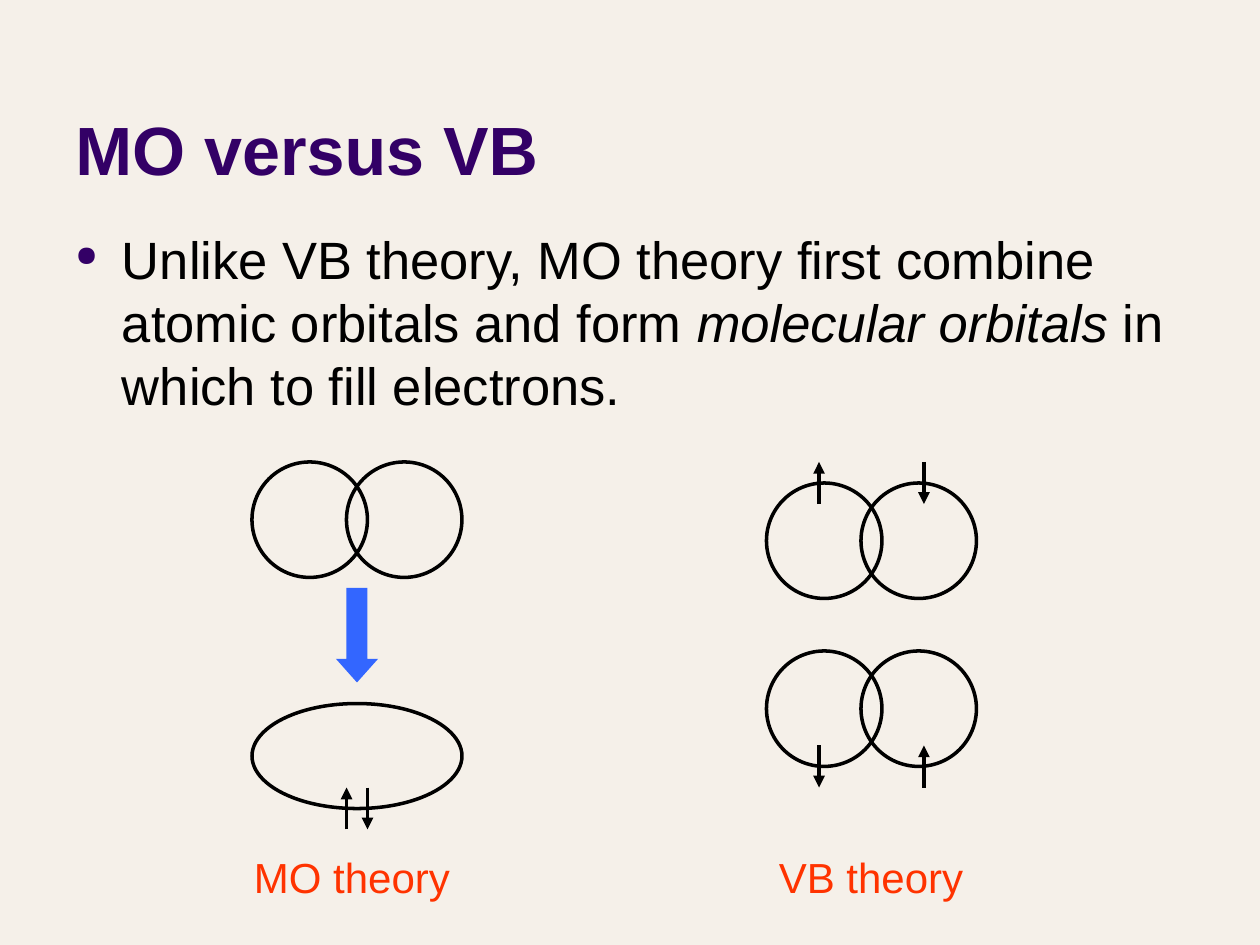
from pptx import Presentation, util as u
from pptx.dml.color import RGBColor
from pptx.enum import shapes, text
from pptx.oxml.ns import qn
from lxml import etree

CELL = u.Inches(1) / 12


def grid(*cells):
    return [u.Emu(round(cell * CELL)) for cell in cells]


def color(value):
    return RGBColor.from_string(value)


deck = Presentation()
deck.slide_width, deck.slide_height = grid(120, 90)
slide = deck.slides.add_slide(deck.slide_layouts[6])
slide.background.fill.solid()
slide.background.fill.fore_color.rgb = color("F5F0E9")

writings = [
    ((6, 1.6, 108, 17), "MO versus VB", 39, "330066", True),
    ((6, 21, 108, 57.8), "", 30, "000000", False),
    ((23, 80.5, 21.4, 6), "MO theory", 24, "FF3300", False),
    ((73, 80.5, 20.4, 6), "VB theory", 24, "FF3300", False),
]
frames = []
for place, words, size, ink, bold in writings:
    frame = slide.shapes.add_textbox(*grid(*place)).text_frame
    frame.word_wrap = place[2] > 100
    paragraph = frame.paragraphs[0]
    paragraph.text = words
    paragraph.alignment = text.PP_ALIGN.LEFT
    paragraph.font.name = "Arial"
    paragraph.font.size = u.Pt(size)
    paragraph.font.bold = bold
    paragraph.font.color.rgb = color(ink)
    frames.append(frame)

title, statement, mo_label, vb_label = frames
title.vertical_anchor = text.MSO_ANCHOR.BOTTOM
for label in (mo_label, vb_label):
    label.auto_size = text.MSO_AUTO_SIZE.SHAPE_TO_FIT_TEXT

claim = statement.paragraphs[0]
claim.line_spacing = u.Pt(36)
for words, italic in [
    ("Unlike VB theory, MO theory first combine atomic orbitals and form ", False),
    ("molecular orbitals ", True),
    ("in which to fill electrons.", False),
]:
    run = claim.add_run()
    run.text = words
    run.font.italic = italic

layout = claim._p.get_or_add_pPr()
layout.set("marL", str(u.Inches(0.37)))
layout.set("indent", str(-u.Inches(0.37)))
bullet = [
    etree.Element(qn("a:buClr")),
    etree.Element(qn("a:buSzPct"), val="54000"),
    etree.Element(qn("a:buChar"), char="●"),
]
etree.SubElement(bullet[0], qn("a:srgbClr"), val="330066")
for position, element in enumerate(bullet, 1):
    layout.insert(position, element)

atom_pairs = [(24, 44), (73, 46), (73, 62)]
orbitals = [(left + shift, top, 11, 11) for left, top in atom_pairs for shift in (0, 9)]
orbitals.append((24, 67, 20, 10))
for place in orbitals:
    orbital = slide.shapes.add_shape(shapes.MSO_SHAPE.OVAL, *grid(*place))
    orbital.shadow.inherit = False
    orbital.fill.background()
    orbital.line.color.rgb = color("000000")
    orbital.line.width = u.Pt(2)

combination = slide.shapes.add_shape(shapes.MSO_SHAPE.DOWN_ARROW, *grid(32, 56, 4, 9))
combination.shadow.inherit = False
combination.adjustments[0] = 0.5
combination.adjustments[1] = 0.56
combination.fill.solid()
combination.fill.fore_color.rgb = color("3366FF")
combination.line.fill.background()

spins = [(33, 75, "up"), (35, 75, "down"), (78, 44, "up"),
         (88, 44, "down"), (78, 71, "down"), (88, 71, "up")]
for column, top, direction in spins:
    start, end = (top + 4, top) if direction == "up" else (top, top + 4)
    electron = slide.shapes.add_connector(
        shapes.MSO_CONNECTOR.STRAIGHT, *grid(column, start, column, end))
    electron.line.color.rgb = color("000000")
    electron.line.width = u.Pt(2.25)
    etree.SubElement(electron.line._get_or_add_ln(), qn("a:tailEnd"), type="triangle")
    etree.SubElement(electron._element.spPr, qn("a:effectLst"))

deck.save("out.pptx")
